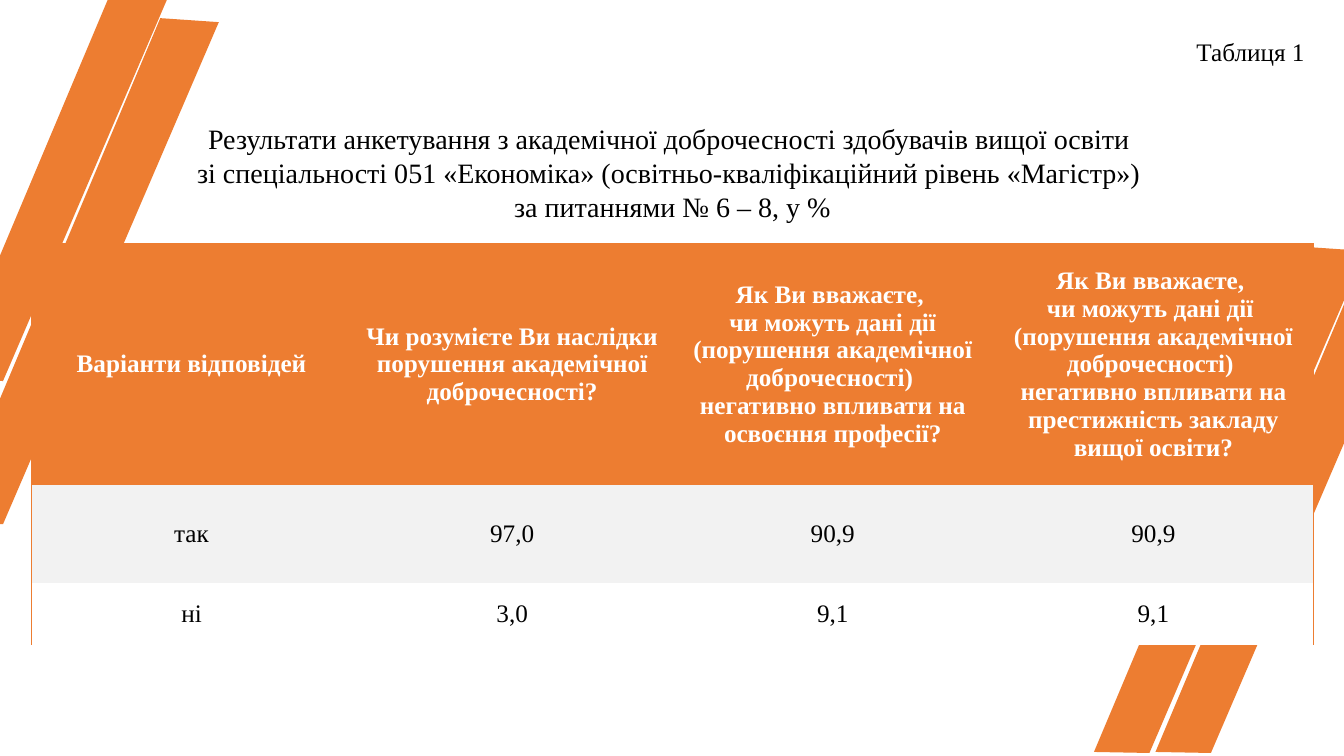
"""Build the slide with the survey table on academic integrity."""
from lxml import etree
from pptx import Presentation
from pptx.dml.color import RGBColor
from pptx.enum.text import MSO_ANCHOR, MSO_AUTO_SIZE, PP_ALIGN
from pptx.oxml.ns import qn
from pptx.util import Inches, Pt

CENTER, RIGHT = PP_ALIGN.CENTER, PP_ALIGN.RIGHT
MIDDLE = MSO_ANCHOR.MIDDLE
GROW = MSO_AUTO_SIZE.SHAPE_TO_FIT_TEXT
FONT = "Times New Roman"
COLORS = {"orange": "ED7D31", "band": "F2F2F2", "white": "FFFFFF", "black": "000000"}


def write_text(frame, text, size=18, color="black", bold=False, align=CENTER):
    for index, line in enumerate(text.split("\n")):
        para = frame.paragraphs[0] if index == 0 else frame.add_paragraph()
        para.alignment = align
        span = para.add_run()
        span.text = line
        span.font.name = FONT
        span.font.size = Pt(size)
        span.font.bold = bold
        span.font.color.rgb = RGBColor.from_string(COLORS[color])


def set_borders(cell, shown):
    properties = cell._tc.get_or_add_tcPr()
    for position, side in enumerate(("lnL", "lnR", "lnT", "lnB")):
        border = etree.Element(qn(f"a:{side}"), w=str(Pt(1)))
        if side in shown:
            fill = etree.SubElement(border, qn("a:solidFill"))
            etree.SubElement(fill, qn("a:srgbClr"), val=COLORS["orange"])
        else:
            etree.SubElement(border, qn("a:noFill"))
        properties.insert(position, border)


deck = Presentation()
deck.slide_width, deck.slide_height = Inches(13.33), Inches(7.5)
page = deck.slides.add_slide(deck.slide_layouts[6])

STRIPE_OUTLINE = [(0, 0), (0.58, 0.04), (-1.56, 5.02), (-2.11, 5.01)]
STRIPE_STARTS = [(1.59, 0.18), (1.59, -1.24), (12.96, 2.45), (13.57, 2.45)]
for left, top in STRIPE_STARTS:
    corners = [(Inches(left + x), Inches(top + y)) for x, y in STRIPE_OUTLINE]
    builder = page.shapes.build_freeform(*corners[0])
    builder.add_line_segments(corners[1:], close=True)
    stripe = builder.convert_to_shape()
    stripe.shadow.inherit = False
    stripe.fill.solid()
    stripe.fill.fore_color.rgb = RGBColor.from_string(COLORS["orange"])
    stripe.line.fill.background()

ROWS = [
    (2.39, "orange", [
        "Варіанти відповідей",
        "Чи розумієте Ви наслідки порушення академічної доброчесності?",
        "Як Ви вважаєте, \nчи можуть дані дії (порушення академічної доброчесності) \n"
        "негативно впливати на освоєння професії?",
        "Як Ви вважаєте, \nчи можуть дані дії \n(порушення академічної доброчесності) \n"
        "негативно впливати на престижність закладу вищої освіти?",
    ]),
    (0.97, "band", ["так", "97,0", "90,9", "90,9"]),
    (0.62, "white", ["ні", "3,0", "9,1", "9,1"]),
]
table = page.shapes.add_table(
    3, 4, Inches(0.31), Inches(2.42), Inches(12.72), Inches(3.98)
).table
for column in table.columns:
    column.width = Inches(3.18)
for row_index, (height, fill_color, texts) in enumerate(ROWS):
    header = row_index == 0
    table.rows[row_index].height = Inches(height)
    for column_index, text in enumerate(texts):
        cell = table.cell(row_index, column_index)
        cell.vertical_anchor = MIDDLE
        cell.margin_left = cell.margin_right = Inches(0.07)
        cell.margin_top = cell.margin_bottom = Inches(0)
        cell.fill.solid()
        cell.fill.fore_color.rgb = RGBColor.from_string(COLORS[fill_color])
        write_text(cell.text_frame, text, color="white" if header else "black", bold=header)
        shown = {"lnT"} if header else set()
        if column_index == 0:
            shown.add("lnL")
        if column_index == 3:
            shown.add("lnR")
        set_borders(cell, shown)

title = page.shapes.add_textbox(Inches(0.25), Inches(1.16), Inches(12.84), Inches(1.11))
title.text_frame.word_wrap = True
title.text_frame.auto_size = GROW
write_text(
    title.text_frame,
    "Результати анкетування з академічної доброчесності здобувачів вищої освіти \n"
    "зі спеціальності 051 «Економіка» (освітньо-кваліфікаційний рівень «Магістр») \n"
    "за питаннями № 6 – 8, у %",
    size=20,
)

number = page.shapes.add_textbox(Inches(11.75), Inches(0.31), Inches(1.35), Inches(0.4))
number.text_frame.word_wrap = False
number.text_frame.auto_size = GROW
write_text(number.text_frame, "Таблиця 1 ", align=RIGHT)

deck.save("out.pptx")
